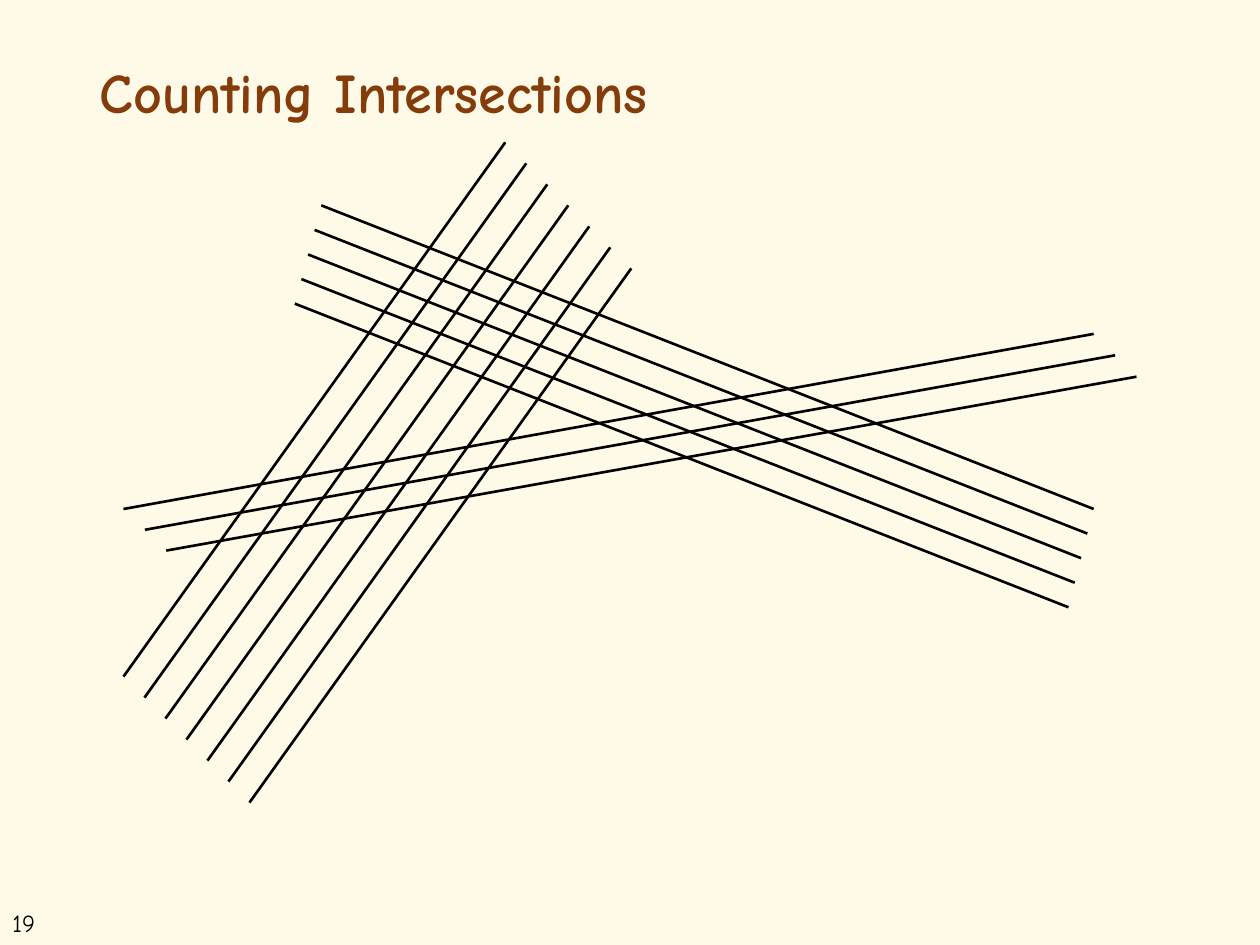
from dataclasses import dataclass

from lxml import etree
from pptx import Presentation
from pptx.dml.color import RGBColor
from pptx.enum import shapes, text
from pptx.oxml import ns
from pptx.util import Inches, Pt


@dataclass(frozen=True)
class Theme:
    font: str = "Comic Neue"
    background: RGBColor = RGBColor(0xFF, 0xF9, 0xE8)
    heading: RGBColor = RGBColor(0x84, 0x3C, 0x0B)
    ink: RGBColor = RGBColor(0, 0, 0)
    heading_size: int = 32
    number_size: int = 14
    line_width: float = 1.5


THEME = Theme()

# Each bundle: number of lines, first line and last line as
# (from x, from y, to x, to y), measured from the corner of the arrangement.
BUNDLES = [
    (7, (0, 4.24, 3.03, 0), (1, 5.24, 4.03, 1)),
    (5, (1.57, 0.5, 7.7, 2.91), (1.36, 1.28, 7.5, 3.69)),
    (3, (0, 2.91, 7.7, 1.52), (0.34, 3.24, 8.04, 1.86)),
]


def add_run(paragraph, words, size, color, bold=False):
    run = paragraph.add_run()
    run.text = words
    run.font.name = THEME.font
    run.font.size = Pt(size)
    run.font.bold = bold
    run.font.color.rgb = color


def place_title(slide, box, words):
    title = slide.shapes.title
    title.left, title.top, title.width, title.height = map(Inches, box)
    frame = title.text_frame
    frame.word_wrap = True
    frame.vertical_anchor = text.MSO_ANCHOR.MIDDLE
    paragraph = frame.paragraphs[0]
    paragraph.alignment = text.PP_ALIGN.LEFT
    paragraph.line_spacing = 0.9
    add_run(paragraph, words, THEME.heading_size, THEME.heading, bold=True)


def place_page_number(slide, box, number):
    frame = slide.shapes.add_textbox(*map(Inches, box)).text_frame
    frame.word_wrap = True
    add_run(frame.paragraphs[0], str(number), THEME.number_size, THEME.ink)


def add_line(slide, ends):
    line = slide.shapes.add_connector(
        shapes.MSO_CONNECTOR.STRAIGHT, *map(Inches, ends))
    line.line.color.rgb = THEME.ink
    line.line.width = Pt(THEME.line_width)
    etree.SubElement(line._element.spPr, ns.qn("a:effectLst"))


def place_arrangement(slide, corner, bundles):
    """Draw each bundle as evenly spaced lines between its first and last."""
    left, top = corner
    origin = (left, top, left, top)
    for count, first, last in bundles:
        for index in range(count):
            share = index / (count - 1)
            add_line(slide, [base + start + (end - start) * share
                             for base, start, end in zip(origin, first, last)])


def main():
    deck = Presentation()
    deck.slide_width, deck.slide_height = Inches(10), Inches(7.5)
    slide = deck.slides.add_slide(deck.slide_layouts.get_by_name("Title Only"))
    slide.background.fill.solid()
    slide.background.fill.fore_color.rgb = THEME.background

    place_page_number(slide, (0, 7.16, 0.69, 0.34), 19)
    place_title(slide, (0.69, 0.4, 8.62, 0.71), "Counting Intersections")
    place_arrangement(slide, (0.98, 1.13), BUNDLES)
    deck.save("out.pptx")


if __name__ == "__main__":
    main()
